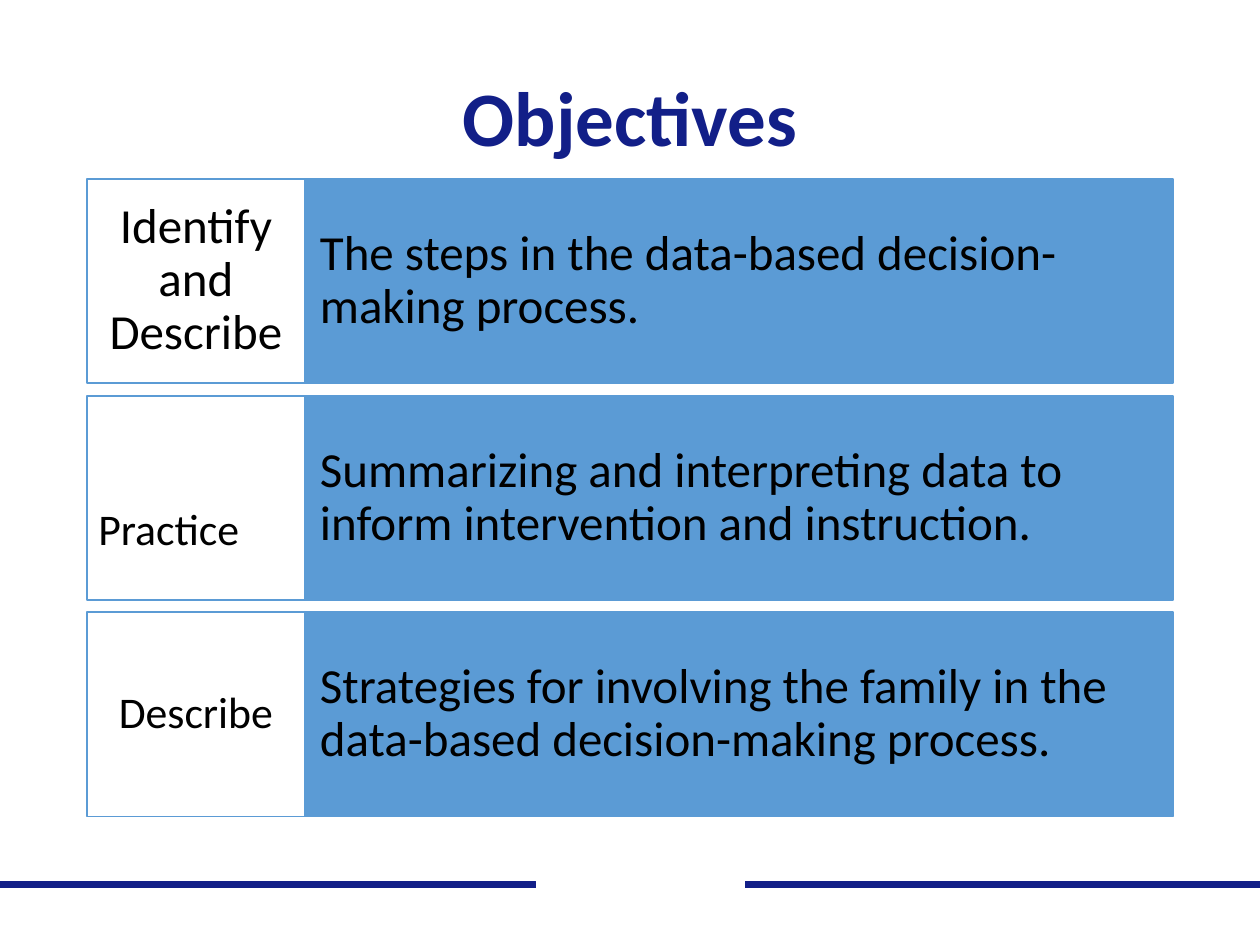
from pptx import Presentation
from pptx.dml.color import RGBColor
from pptx.enum.shapes import MSO_CONNECTOR, MSO_SHAPE
from pptx.enum.text import MSO_ANCHOR, PP_ALIGN
from pptx.oxml.xmlchemy import OxmlElement
from pptx.util import Inches, Pt

COLORS = {"navy": "121F88", "blue": "5B9BD5", "white": "FFFFFF", "black": "000000"}
LEFT = 0.69
LABEL_WIDTH, GOAL_WIDTH = 1.73, 6.9
FIRST_TOP, ROW_HEIGHT, ROW_STEP = 1.42, 1.62, 1.72

OBJECTIVES = [
    ("Identify and Describe", 28, PP_ALIGN.CENTER, 0.16,
     "The steps in the data-based decision-making process."),
    ("Practice", 25, PP_ALIGN.LEFT, 0.7,
     "Summarizing and interpreting data to inform intervention and instruction."),
    ("Describe", 25, PP_ALIGN.CENTER, 0.16,
     "Strategies for involving the family in the data-based decision-making process."),
]


class SlideBuilder:
    font = "Calibri"

    def __init__(self, slide):
        self.slide = slide

    def color(self, name):
        return RGBColor.from_string(COLORS[name])

    def set_text(self, shape, text, size, align, insets, color="black", bold=False):
        frame = shape.text_frame
        frame.word_wrap = True
        frame.vertical_anchor = MSO_ANCHOR.MIDDLE
        frame.margin_left, frame.margin_top, frame.margin_right, frame.margin_bottom = (
            Inches(inset) for inset in insets)
        frame.text = text
        paragraph = frame.paragraphs[0]
        paragraph.alignment = align
        paragraph.line_spacing = 0.9
        font = paragraph.runs[0].font
        font.name, font.size, font.bold = self.font, Pt(size), bold
        font.color.rgb = self.color(color)

    def title(self, text, left, top, width, height):
        heading = self.slide.shapes.add_textbox(
            Inches(left), Inches(top), Inches(width), Inches(height))
        self.set_text(heading, text, 44, PP_ALIGN.CENTER, (0.1, 0.05, 0.1, 0.05), "navy", True)

    def panel(self, left, top, width, fill, text, size, align, insets):
        panel = self.slide.shapes.add_shape(
            MSO_SHAPE.RECTANGLE, Inches(left), Inches(top), Inches(width), Inches(ROW_HEIGHT))
        panel.shadow.inherit = False
        panel.fill.solid()
        panel.fill.fore_color.rgb = self.color(fill)
        panel.line.color.rgb = self.color("blue")
        panel.line.width = Pt(1)
        self.set_text(panel, text, size, align, insets)

    def rule(self, start, end, y, color):
        rule = self.slide.shapes.add_connector(
            MSO_CONNECTOR.STRAIGHT, Inches(start), Inches(y), Inches(end), Inches(y))
        rule.line.color.rgb = self.color(color)
        rule.line.width = Pt(4.5)
        rule._element.spPr.append(OxmlElement("a:effectLst"))


def main():
    presentation = Presentation()
    presentation.slide_width, presentation.slide_height = Inches(10), Inches(7.5)
    builder = SlideBuilder(presentation.slides.add_slide(presentation.slide_layouts[6]))

    builder.rule(0, 10, 7.02, "navy")
    builder.rule(4.25, 5.91, 7.02, "white")
    builder.title("Objectives", LEFT, 0.24, 8.62, 1.45)

    for row, (label, size, align, label_inset, goal) in enumerate(OBJECTIVES):
        top = FIRST_TOP + row * ROW_STEP
        builder.panel(LEFT + LABEL_WIDTH - 0.01, top, GOAL_WIDTH, "blue", goal, 28,
                      PP_ALIGN.LEFT, (0.13, 0.41, 0.13, 0.41))
        builder.panel(LEFT, top, LABEL_WIDTH, "white", label, size, align,
                      (0.09, label_inset, 0.09, 0.16))

    presentation.save("out.pptx")


if __name__ == "__main__":
    main()
